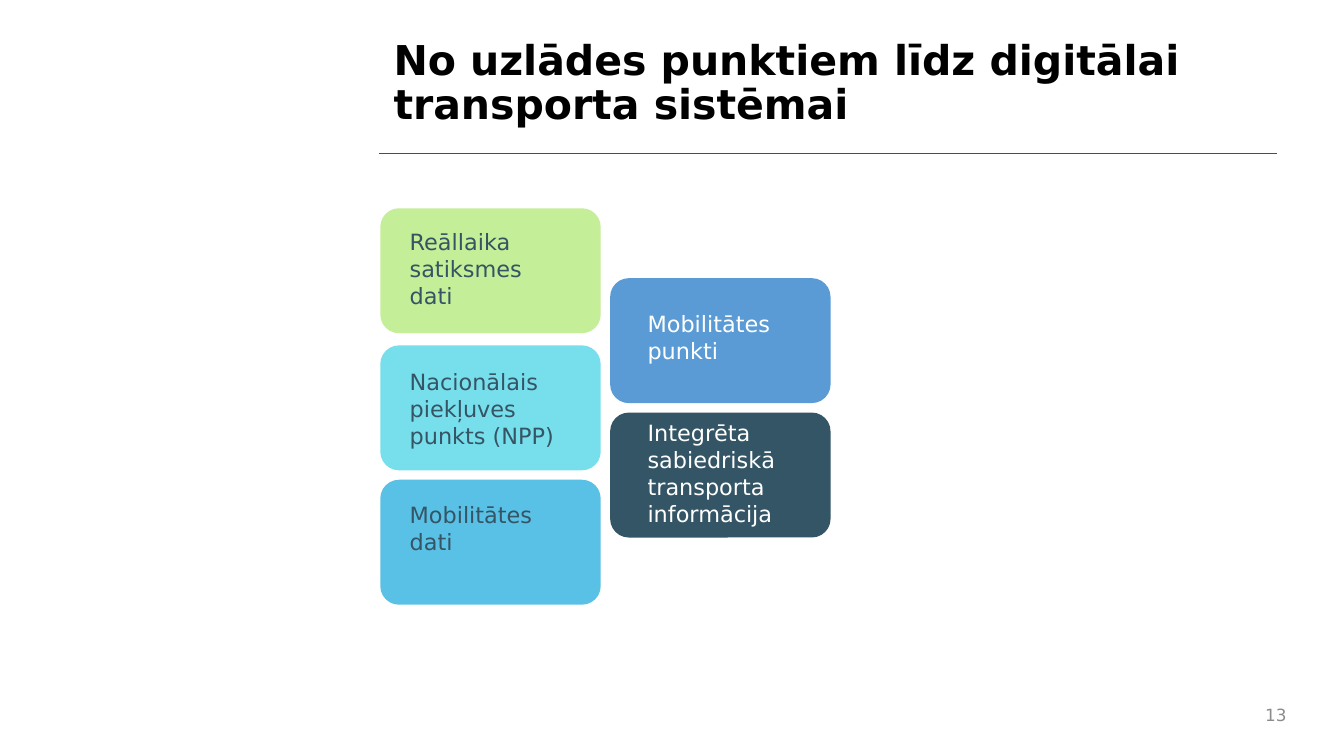
from lxml import etree
from pptx import Presentation
from pptx import util as u
from pptx.dml import color
from pptx.enum import shapes, text
from pptx.oxml import ns

FONT = "DejaVu Sans"
SLATE = "355464"
WHITE = "FFFFFF"
CARD_WIDTH, CARD_HEIGHT = 1.64, 0.93
LEFT_COLUMN, RIGHT_COLUMN = 2.83, 4.54

CARDS = [
    (LEFT_COLUMN, 1.55, "C5EE98"),
    (LEFT_COLUMN, 2.57, "77DFEC"),
    (LEFT_COLUMN, 3.57, "5AC1E6"),
    (RIGHT_COLUMN, 2.07, "5B9BD5"),
    (RIGHT_COLUMN, 3.07, "345565"),
]
LABELS = [
    (2.95, 1.65, 1.23, 0.71, SLATE, "Reāllaika satiksmes dati"),
    (2.95, 2.69, 1.42, 0.71, SLATE, "Nacionālais piekļuves punkts (NPP)"),
    (2.95, 3.68, 1.33, 0.5, SLATE, "Mobilitātes dati"),
    (4.72, 2.26, 1.23, 0.5, WHITE, "Mobilitātes punkti"),
    (4.72, 3.07, 1.64, 0.91, WHITE, "Integrēta sabiedriskā transporta informācija"),
]


def rgb(value):
    """Return the colour for a hex string."""
    return color.RGBColor.from_string(value)


def add_text(page, left, top, width, height, hex_color, wording, size=12, bold=False):
    """Add a wrapped text box and return it."""
    box = page.shapes.add_textbox(*map(u.Inches, (left, top, width, height)))
    box.text_frame.word_wrap = True
    box.text_frame.text = wording
    span = box.text_frame.paragraphs[0].runs[0]
    span.font.name = FONT
    span.font.size = u.Pt(size)
    span.font.bold = bold
    span.font.color.rgb = rgb(hex_color)
    return box


def add_card(page, left, top, fill):
    """Add a plain rounded card."""
    card = page.shapes.add_shape(
        shapes.MSO_SHAPE.ROUNDED_RECTANGLE,
        *map(u.Inches, (left, top, CARD_WIDTH, CARD_HEIGHT)))
    card.adjustments[0] = 0.15
    card.shadow.inherit = False
    card.fill.solid()
    card.fill.fore_color.rgb = rgb(fill)
    card.line.fill.background()


def add_rule(page, left, right, top):
    """Add the thin horizontal rule under the title."""
    rule = page.shapes.add_connector(
        shapes.MSO_CONNECTOR.STRAIGHT, *map(u.Inches, (left, top, right, top)))
    rule.line.color.rgb = rgb(SLATE)
    rule.line.width = u.Pt(0.5)
    etree.SubElement(rule._element.spPr, ns.qn("a:effectLst"))


def main():
    """Build the slide and save the deck."""
    deck = Presentation()
    deck.slide_width = u.Inches(10)
    deck.slide_height = deck.slide_width * 9 // 16
    page = deck.slides.add_slide(deck.slide_layouts[6])

    add_rule(page, 2.82, 9.5, 1.14)
    title = add_text(page, 2.83, 0.25, 6.67, 0.87, "000000",
                     "No uzlādes punktiem līdz digitālai transporta sistēmai", 22, True)
    title.text_frame.paragraphs[0].line_spacing = 0.9

    number = add_text(page, 9.2, 5.19, 0.47, 0.25, "8C8C8C", "13", 9)
    number.text_frame.vertical_anchor = text.MSO_ANCHOR.MIDDLE
    number.text_frame.paragraphs[0].alignment = text.PP_ALIGN.RIGHT

    for card in CARDS:
        add_card(page, *card)
    for label in LABELS:
        add_text(page, *label).text_frame.auto_size = text.MSO_AUTO_SIZE.SHAPE_TO_FIT_TEXT

    deck.save("out.pptx")


if __name__ == "__main__":
    main()
